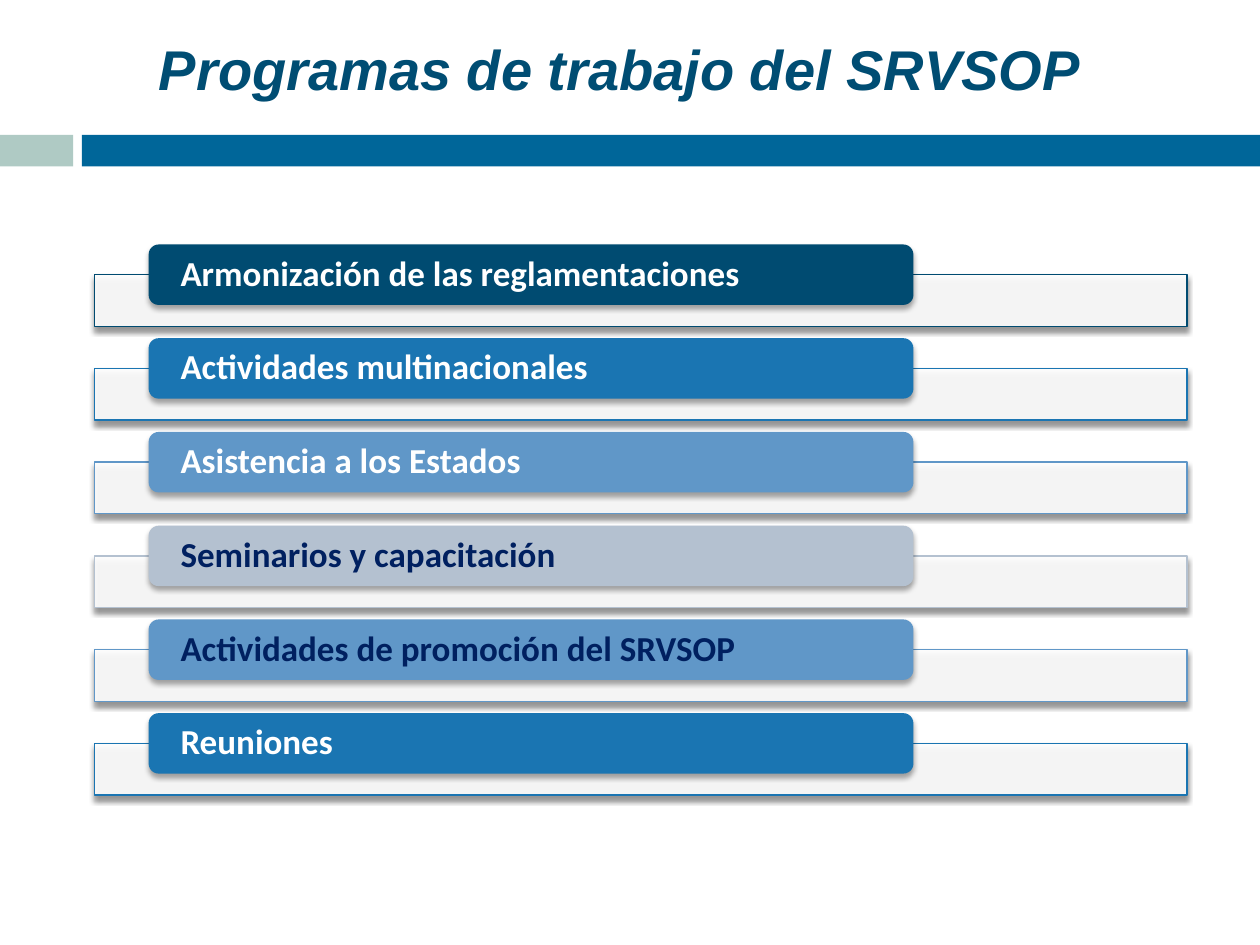
from dataclasses import dataclass

from lxml.etree import SubElement
from pptx import Presentation
from pptx.dml.color import RGBColor
from pptx.enum.shapes import MSO_SHAPE as Kind
from pptx.enum.text import MSO_ANCHOR as Anchor, PP_ALIGN as Align
from pptx.oxml.ns import qn
from pptx.shapes.autoshape import Shape
from pptx.slide import Slide
from pptx.text.text import TextFrame
from pptx.util import Inches, Pt

NAVY, BLUE, SKY, GREY = "004B71", "1A75B2", "6097C8", "B4C1D0"
WHITE, INK = "FFFFFF", "002060"
TOP, STEP = 1.94, 3.72 / 5


@dataclass
class Program:
    name: str
    fill: str
    ink: str = WHITE


PROGRAMS = [
    Program("Armonización de las reglamentaciones", NAVY),
    Program("Actividades multinacionales", BLUE),
    Program("Asistencia a los Estados", SKY),
    Program("Seminarios y capacitación", GREY, INK),
    Program("Actividades de promoción del SRVSOP", SKY, INK),
    Program("Reuniones", BLUE),
]


def color(code: str) -> RGBColor:
    return RGBColor.from_string(code)


def add_box(slide: Slide, kind: Kind, left: float, top: float,
            width: float, height: float, fill: str) -> Shape:
    box = slide.shapes.add_shape(
        kind, Inches(left), Inches(top), Inches(width), Inches(height))
    box.shadow.inherit = False
    box.fill.solid()
    box.fill.fore_color.rgb = color(fill)
    box.line.fill.background()
    return box


def add_shade(box: Shape, dist: float, alpha: int) -> None:
    effect = box._element.spPr.find(qn("a:effectLst"))
    shade = SubElement(effect, qn("a:outerShdw"), blurRad=str(Pt(3)),
                       dist=str(Pt(dist)), dir="5400000", rotWithShape="0")
    tone = SubElement(shade, qn("a:srgbClr"), val="000000")
    SubElement(tone, qn("a:alpha"), val=str(alpha * 1000))


def set_text(frame: TextFrame, text: str, font: str, size: int,
             ink: str, align: Align, slant: bool = False) -> None:
    frame.text = text
    frame.word_wrap = True
    frame.vertical_anchor = Anchor.MIDDLE
    line = frame.paragraphs[0]
    line.alignment = align
    style = line.runs[0].font
    style.name, style.size = font, Pt(size)
    style.bold, style.italic = True, slant
    style.color.rgb = color(ink)


def add_program(slide: Slide, item: Program, top: float) -> None:
    panel = add_box(slide, Kind.RECTANGLE, 0.75, top + 0.24, 8.67, 0.41, WHITE)
    tone = panel._element.spPr.find(qn("a:solidFill"))[0]
    SubElement(tone, qn("a:alpha"), val="90000")
    panel.line.color.rgb = color(item.fill)
    panel.line.width = Pt(0.79)
    add_shade(panel, 2.4, 45)

    label = add_box(slide, Kind.ROUNDED_RECTANGLE, 1.18, top, 6.07, 0.48, item.fill)
    add_shade(label, 2, 35)
    frame = label.text_frame
    set_text(frame, item.name, "Calibri", 20, item.ink, Align.LEFT)
    frame.margin_left = frame.margin_right = Inches(0.23)
    frame.margin_top = frame.margin_bottom = 0
    frame.paragraphs[0].line_spacing = 0.9


def main() -> None:
    deck = Presentation()
    deck.slide_width, deck.slide_height = Inches(10), Inches(7.5)
    slide = deck.slides.add_slide(deck.slide_layouts[6])

    add_box(slide, Kind.RECTANGLE, 0, 1.07, 0.58, 0.25, "AFCAC4")
    add_box(slide, Kind.RECTANGLE, 0.65, 1.07, 9.35, 0.25, "006699")
    title = slide.shapes.add_textbox(
        Inches(0.27), Inches(0.21), Inches(9.41), Inches(0.66))
    set_text(title.text_frame, "Programas de trabajo del SRVSOP ",
             "Arial", 32, "004D73", Align.CENTER, True)

    for row, item in enumerate(PROGRAMS):
        add_program(slide, item, TOP + row * STEP)
    deck.save("out.pptx")


if __name__ == "__main__":
    main()
